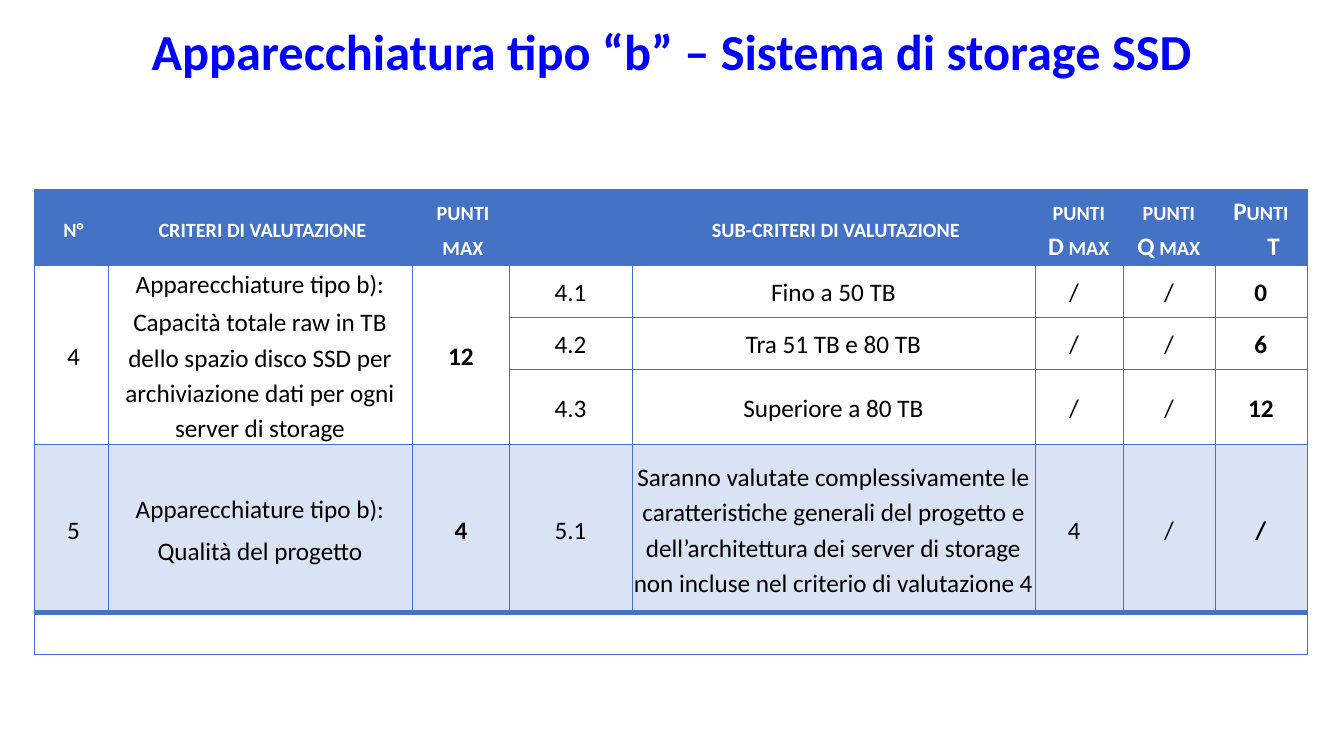
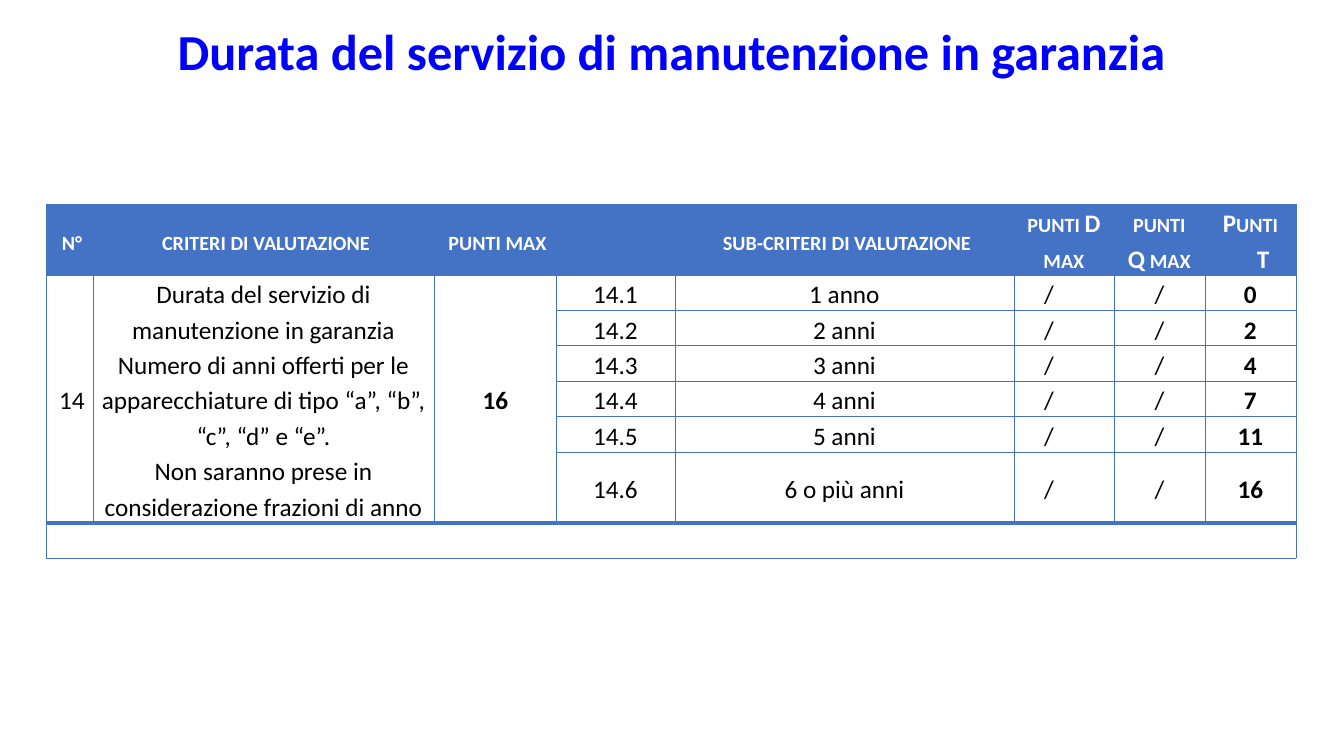
"""Builds two slides of scoring criteria, each a title above a table."""
from dataclasses import dataclass

from lxml.etree import SubElement
from pptx import Presentation
from pptx.dml.color import RGBColor
from pptx.enum.text import MSO_ANCHOR, PP_ALIGN
from pptx.oxml.ns import qn
from pptx.util import Emu, Pt

SCALE = 12192000 / 1344


@dataclass(frozen=True)
class Theme:
    font: str = "Calibri"
    title_color: str = "0000FF"
    accent: str = "4472C4"
    band: str = "DAE3F3"
    white: str = "FFFFFF"
    black: str = "000000"
    title_size: int = 36
    text_size: int = 18
    thin: float = 0.5
    thick: float = 4
    line_spacing: float = 1.15


THEME = Theme()
SLIDE_SIZE = (1344, 756)
TITLE_AREA = (0, 14, 1344, 72)
POINTS_COLUMN, DISCRETIONARY_COLUMN = 2, 5
BOLD_COLUMNS = (POINTS_COLUMN, 7)

HEADERS = [
    ("n°", {"left": 5}),
    ("criteri di valutazione", {"left": 5}),
    ("punti max", {"left": 5}),
    ("", {}),
    ("sub-criteri di valutazione", {"left": 5}),
    ("punti D max", {"left": 11, "right": 11}),
    ("punti Q max", {"left": 11, "right": 11}),
    ("Punti\vT", {"left": 13, "first": -13}),
]

SLIDES = [
    {
        "title": "Apparecchiatura tipo “b” – Sistema di storage SSD",
        "origin": (34, 189),
        "columns": [74, 304, 97, 123, 403, 88, 92, 92],
        "rows": [76, 52, 52, 75, 168, 42],
        "discretionary_right": 10,
        "criteria": [
            {
                "number": "4",
                "text": [
                    "Apparecchiature tipo b):",
                    "Capacità totale raw in TB dello spazio disco SSD per "
                    "archiviazione dati per ogni server di storage",
                ],
                "gap": 1.9,
                "points": "12",
                "fill": THEME.white,
                "subcriteria": [
                    ("4.1", "Fino a 50 TB", "/", "/", "0"),
                    ("4.2", "Tra 51 TB e 80 TB", "/", "/", "6"),
                    ("4.3", "Superiore a 80 TB", "/", "/", "12"),
                ],
            },
            {
                "number": "5",
                "text": ["Apparecchiature tipo b):", "Qualità del progetto"],
                "gap": 4.9,
                "points": "4",
                "fill": THEME.band,
                "subcriteria": [
                    (
                        "5.1",
                        "Saranno valutate complessivamente le caratteristiche "
                        "generali del progetto e dell’architettura dei server di "
                        "storage non incluse nel criterio di valutazione 4",
                        "4", "/", "/",
                    ),
                ],
            },
        ],
    },
    {
        "title": "Durata del servizio di manutenzione in garanzia",
        "origin": (46, 204),
        "columns": [47, 341, 122, 119, 339, 100, 91, 91],
        "rows": [71, 35, 35, 35, 35, 35, 71, 35],
        "discretionary_right": 30,
        "criteria": [
            {
                "number": "14",
                "text": [
                    "Durata del servizio di manutenzione in garanzia",
                    "Numero di anni offerti per le apparecchiature di tipo "
                    "“a”, “b”, “c”, “d” e “e”.",
                    "Non saranno prese in considerazione frazioni di anno",
                ],
                "gap": 0.1,
                "points": "16",
                "fill": THEME.white,
                "subcriteria": [
                    ("14.1", "1 anno", "/", "/", "0"),
                    ("14.2", "2 anni", "/", "/", "2"),
                    ("14.3", "3 anni", "/", "/", "4"),
                    ("14.4", "4 anni", "/", "/", "7"),
                    ("14.5", "5 anni", "/", "/", "11"),
                    ("14.6", "6 o più anni", "/", "/", "16"),
                ],
            },
        ],
    },
]


def px(length):
    return Emu(round(length * SCALE))


def write(frame, paragraphs, size=THEME.text_size, color=THEME.black, bold=False,
          small_caps=False, left=0, right=0, first=0, gap=0, spacing=None):
    """Fills a text frame with centred paragraphs in one format."""
    for index, text in enumerate(paragraphs):
        para = frame.add_paragraph() if index else frame.paragraphs[0]
        para.text = text
        para.alignment = PP_ALIGN.CENTER
        para.line_spacing = spacing
        para.space_before = Pt(gap if index else 0)
        properties = para._p.get_or_add_pPr()
        for name, length in (("marL", left), ("marR", right), ("indent", first)):
            properties.set(name, str(px(length)))
        for span in para.runs:
            span.font.name = THEME.font
            span.font.size = Pt(size)
            span.font.bold = bold
            span.font.color.rgb = RGBColor.from_string(color)
            if small_caps:
                span.font._element.set("cap", "small")


def style_cell(cell, fill, top, bottom):
    """Sets the borders, fill, margins and anchor of a cell."""
    properties = cell._tc.get_or_add_tcPr()
    widths = {"lnL": THEME.thin, "lnR": THEME.thin, "lnT": top, "lnB": bottom}
    for side, width in widths.items():
        line = SubElement(properties, qn(f"a:{side}"), w=str(Pt(width)))
        solid = SubElement(line, qn("a:solidFill"))
        SubElement(solid, qn("a:srgbClr"), val=THEME.accent)
    cell.fill.solid()
    cell.fill.fore_color.rgb = RGBColor.from_string(fill)
    cell.margin_left = cell.margin_right = cell.margin_top = cell.margin_bottom = 0
    cell.vertical_anchor = MSO_ANCHOR.MIDDLE


def write_cell(cell, paragraphs, **style):
    write(cell.text_frame, paragraphs, spacing=THEME.line_spacing, **style)


def add_criterion(table, start, criterion, discretionary_right):
    """Writes one criterion with its subcriteria and returns the next free row."""
    end = start + len(criterion["subcriteria"])
    shared = [
        ([criterion["number"]], {"left": 5}),
        (criterion["text"], {"left": 5, "right": 5, "gap": criterion["gap"]}),
        ([criterion["points"]], {"left": 1}),
    ]
    for column, (paragraphs, style) in enumerate(shared):
        cell = table.cell(start, column)
        if end - start > 1:
            cell.merge(table.cell(end - 1, column))
        write_cell(cell, paragraphs, bold=column in BOLD_COLUMNS, **style)
    for row, values in enumerate(criterion["subcriteria"], start):
        for column, value in enumerate(values, len(shared)):
            right = discretionary_right if column == DISCRETIONARY_COLUMN else 0
            write_cell(table.cell(row, column), [value], right=right,
                       bold=column in BOLD_COLUMNS)
    return end


def add_criteria_table(page, content):
    """Adds the table of criteria, closed by an empty full-width row."""
    columns, rows = content["columns"], content["rows"]
    area = (*content["origin"], sum(columns), sum(rows))
    table = page.shapes.add_table(len(rows), len(columns), *map(px, area)).table
    table.horz_banding = False
    for column, width in zip(table.columns, columns):
        column.width = px(width)
    for row, height in zip(table.rows, rows):
        row.height = px(height)

    fills = [THEME.accent]
    for criterion in content["criteria"]:
        fills += [criterion["fill"]] * len(criterion["subcriteria"])
    fills.append(THEME.white)
    last = len(rows) - 1
    for index, fill in enumerate(fills):
        top = THEME.thick if index == last else THEME.thin
        bottom = THEME.thick if index == last - 1 else THEME.thin
        for cell in table.rows[index].cells:
            style_cell(cell, fill, top, bottom)

    for column, (text, style) in enumerate(HEADERS):
        if text:
            write_cell(table.cell(0, column), [text], color=THEME.white,
                       bold=True, small_caps=True, **style)
    start = 1
    for criterion in content["criteria"]:
        start = add_criterion(table, start, criterion, content["discretionary_right"])
    table.cell(last, 0).merge(table.cell(last, len(columns) - 1))


def add_title(page, text):
    title = page.shapes.title
    title.left, title.top, title.width, title.height = map(px, TITLE_AREA)
    title.text_frame.word_wrap = True
    title.text_frame.vertical_anchor = MSO_ANCHOR.MIDDLE
    write(title.text_frame, [text], size=THEME.title_size,
          color=THEME.title_color, bold=True)


def main():
    deck = Presentation()
    deck.slide_width, deck.slide_height = map(px, SLIDE_SIZE)
    title_only = deck.slide_layouts.get_by_name("Title Only")
    for content in SLIDES:
        page = deck.slides.add_slide(title_only)
        add_criteria_table(page, content)
        add_title(page, content["title"])
    deck.save("out.pptx")


if __name__ == "__main__":
    main()
